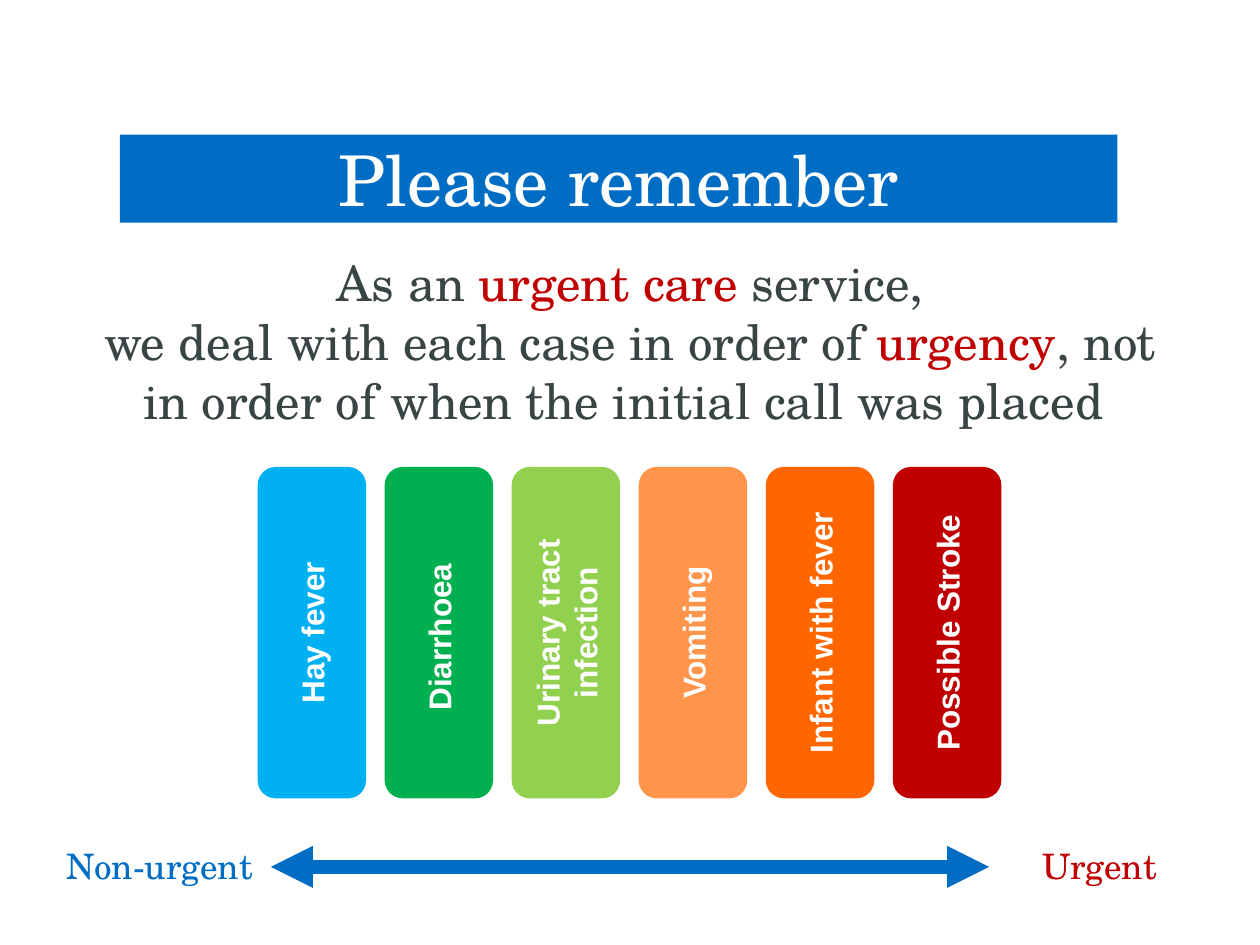
from lxml import etree
from pptx import Presentation
from pptx import util as u
from pptx.dml import color
from pptx.enum import shapes, text
from pptx.oxml import ns

SERIF = "TeX Gyre Schola"
BLUE, RED, GREY, WHITE = "006DC4", "C00000", "394445", "FFFFFF"
CARDS = [
    ("Hay fever", "00B0F0"),
    ("Diarrhoea ", "00B050"),
    ("Urinary tract infection", "92D050"),
    ("Vomiting", "FF944B"),
    ("Infant with fever", "FF6600"),
    ("Possible Stroke", RED),
]


def rgb(code):
    return color.RGBColor.from_string(code)


def node(parent, tag, **attrs):
    return etree.SubElement(parent, ns.qn(tag), attrs)


class Deck:
    head = {"name": SERIF, "size": u.Pt(40), "bold": False}
    body = {"name": SERIF, "size": u.Pt(28)}
    label = {"name": SERIF, "size": u.Pt(20)}
    card = {"name": "Arial", "size": u.Pt(18), "bold": True}

    def __init__(self, show):
        self.slide = show.slides.add_slide(show.slide_layouts[5])

    def letter(self, shape, paras, style, anchor):
        frame = shape.text_frame
        frame.word_wrap = True
        frame.auto_size = text.MSO_AUTO_SIZE.NONE
        frame.vertical_anchor = anchor
        for i, runs in enumerate(paras):
            para = frame.add_paragraph() if i else frame.paragraphs[0]
            para.alignment = text.PP_ALIGN.CENTER
            for words, tint in runs:
                run = para.add_run()
                run.text = words
                for key, value in style.items():
                    setattr(run.font, key, value)
                run.font.color.rgb = rgb(tint)

    def title(self, words, box, fill):
        shape = self.slide.shapes.title
        for key, value in zip(("left", "top", "width", "height"), box):
            setattr(shape, key, u.Pt(value))
        geom = node(shape.element.spPr, "a:prstGeom", prst="parallelogram")
        guides = node(geom, "a:avLst")
        node(guides, "a:gd", name="adj", fmla="val 28600")
        shape.fill.solid()
        shape.fill.fore_color.rgb = rgb(fill)
        self.letter(shape, [[(words, WHITE)]], self.head, text.MSO_ANCHOR.MIDDLE)

    def box(self, paras, box, style):
        shape = self.slide.shapes.add_textbox(*map(u.Pt, box))
        self.letter(shape, paras, style, text.MSO_ANCHOR.TOP)

    def tile(self, words, box, fill):
        kind = shapes.MSO_SHAPE.ROUNDED_RECTANGLE
        shape = self.slide.shapes.add_shape(kind, *map(u.Pt, box))
        shape.rotation = 270
        shape.shadow.inherit = False
        shape.fill.solid()
        shape.fill.fore_color.rgb = rgb(fill)
        shape.line.fill.background()
        self.letter(shape, [[(words, WHITE)]], self.card, text.MSO_ANCHOR.MIDDLE)

    def arrow(self, ends, width, tint):
        kind = shapes.MSO_CONNECTOR.STRAIGHT
        line = self.slide.shapes.add_connector(kind, *map(u.Pt, ends))
        line.line.width = u.Pt(width)
        line.line.color.rgb = rgb(tint)
        props = line.element.spPr
        for tag in ("a:headEnd", "a:tailEnd"):
            node(props.find(ns.qn("a:ln")), tag, type="triangle")
        node(props, "a:effectLst")


def main():
    show = Presentation()
    show.slide_width, show.slide_height = u.Pt(720), u.Pt(540)
    deck = Deck(show)
    deck.title("Please remember", (68.5, 77, 570, 50.2), BLUE)
    deck.box(
        [
            [("As an ", GREY), ("urgent care ", RED), ("service,", GREY)],
            [
                ("we deal with each case in order of ", GREY),
                ("urgency", RED),
                (", not in order of when the initial call was placed ", GREY),
            ],
        ],
        (51, 141, 618, 109),
        deck.body,
    )
    for i, (words, fill) in enumerate(CARDS):
        deck.tile(words, (83.5 + 72.6 * i, 330.5, 189.4, 62), fill)
    for words, left, tint in (("Non-urgent", 9.4, BLUE), ("Urgent", 546.5, RED)):
        deck.box([[(words, tint)]], (left, 479, 164, 31.5), deck.label)
    deck.arrow((565.2, 495.4, 154.8, 495.4), 8, BLUE)
    show.save("out.pptx")


if __name__ == "__main__":
    main()
